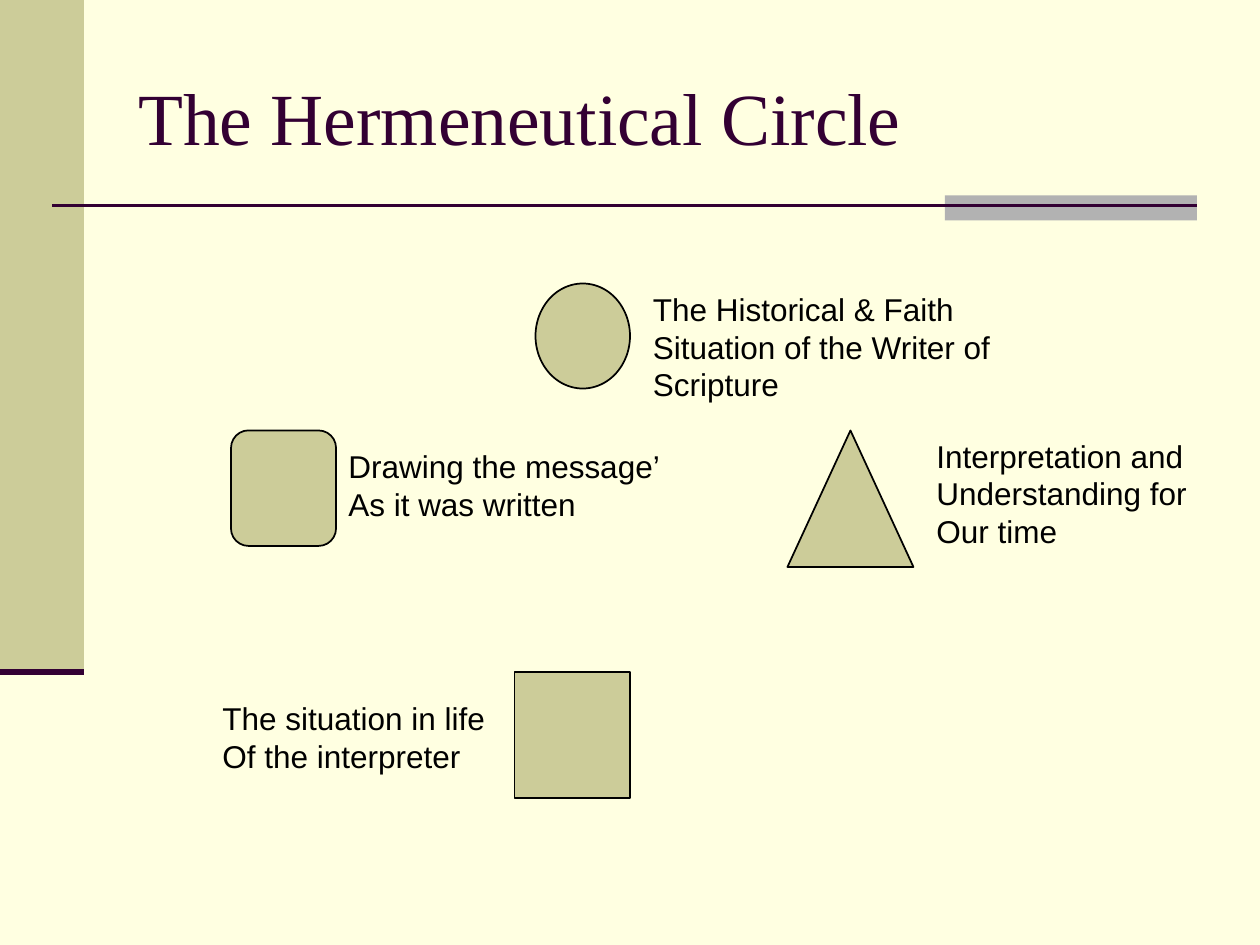
from typing import NamedTuple

from lxml.etree import SubElement
from pptx import Presentation
from pptx.dml.color import RGBColor
from pptx.enum.shapes import MSO_CONNECTOR, MSO_SHAPE
from pptx.enum.text import MSO_ANCHOR
from pptx.oxml.ns import qn
from pptx.util import Inches, Pt

COLUMNS, ROWS = 120, 90
OLIVE, GREY, PLUM, BLACK, CREAM = "CCCC99", "B2B2B2", "330033", "000000", "FFFFE1"


class Box(NamedTuple):
    """Left, top, width and height in grid cells."""
    left: float
    top: float
    width: float
    height: float


class Stage(NamedTuple):
    """One stage of the circle: a symbol and its caption."""
    symbol: MSO_SHAPE
    symbol_box: Box
    caption: str
    caption_box: Box
    wrap: bool = False


STAGES = [
    Stage(MSO_SHAPE.OVAL, Box(51, 27, 9, 10),
          "The Historical & Faith Situation of the Writer of Scripture",
          Box(61, 27, 37, 12.1), wrap=True),
    Stage(MSO_SHAPE.ROUNDED_RECTANGLE, Box(22, 41, 10, 11),
          "Drawing the message’\nAs it was written", Box(32, 42, 32.4, 8.5)),
    Stage(MSO_SHAPE.RECTANGLE, Box(49, 64, 11, 12),
          "The situation in life\nOf the interpreter", Box(20, 66, 27.7, 8.5)),
    Stage(MSO_SHAPE.ISOSCELES_TRIANGLE, Box(75, 41, 12, 13),
          "Interpretation and\nUnderstanding for\nOur time", Box(88, 41, 26.5, 12.1)),
]

deck = Presentation()
deck.slide_width, deck.slide_height = Inches(10), Inches(7.5)
slide = deck.slides.add_slide(deck.slide_layouts[6])


def rgb(value: str) -> RGBColor:
    return RGBColor.from_string(value)


def across(columns: float) -> int:
    return round(deck.slide_width * columns / COLUMNS)


def down(rows: float) -> int:
    return round(deck.slide_height * rows / ROWS)


def place(box: Box) -> tuple[int, int, int, int]:
    return across(box.left), down(box.top), across(box.width), down(box.height)


def add_symbol(kind: MSO_SHAPE, box: Box, fill: str, outline: str | None = None) -> None:
    symbol = slide.shapes.add_shape(kind, *place(box))
    symbol.shadow.inherit = False
    symbol.fill.solid()
    symbol.fill.fore_color.rgb = rgb(fill)
    if outline:
        symbol.line.color.rgb = rgb(outline)
        symbol.line.width = Pt(1)
    else:
        symbol.line.fill.background()


def add_rule(start: float, end: float, row: float, width: float) -> None:
    """Draw a horizontal line between two columns."""
    rule = slide.shapes.add_connector(
        MSO_CONNECTOR.STRAIGHT, across(start), down(row), across(end), down(row))
    rule.line.color.rgb = rgb(PLUM)
    rule.line.width = Pt(width)
    SubElement(rule._element.spPr, qn("a:effectLst"))


def add_text(text: str, box: Box, font: str, size: float, color: str,
             anchor: MSO_ANCHOR = MSO_ANCHOR.TOP, wrap: bool = True) -> None:
    frame = slide.shapes.add_textbox(*place(box)).text_frame
    frame.text = text
    frame.word_wrap = wrap
    frame.vertical_anchor = anchor
    for paragraph in frame.paragraphs:
        for run in paragraph.runs:
            run.font.name, run.font.size = font, Pt(size)
            run.font.color.rgb = rgb(color)


slide.background.fill.solid()
slide.background.fill.fore_color.rgb = rgb(CREAM)

add_symbol(MSO_SHAPE.RECTANGLE, Box(0, 0, 8, 64), OLIVE)
add_symbol(MSO_SHAPE.RECTANGLE, Box(90, 18.6, 24, 2.4), GREY)
add_rule(5, 114, 19.6, 1.5)
add_rule(0, 8, 64, 3.5)
add_text("The Hermeneutical Circle", Box(12, 3.6, 102, 15),
         "Times New Roman", 42, PLUM, MSO_ANCHOR.MIDDLE)

for stage in STAGES:
    add_symbol(stage.symbol, stage.symbol_box, OLIVE, BLACK)
    add_text(stage.caption, stage.caption_box, "Arial", 18, BLACK, wrap=stage.wrap)

deck.save("out.pptx")
